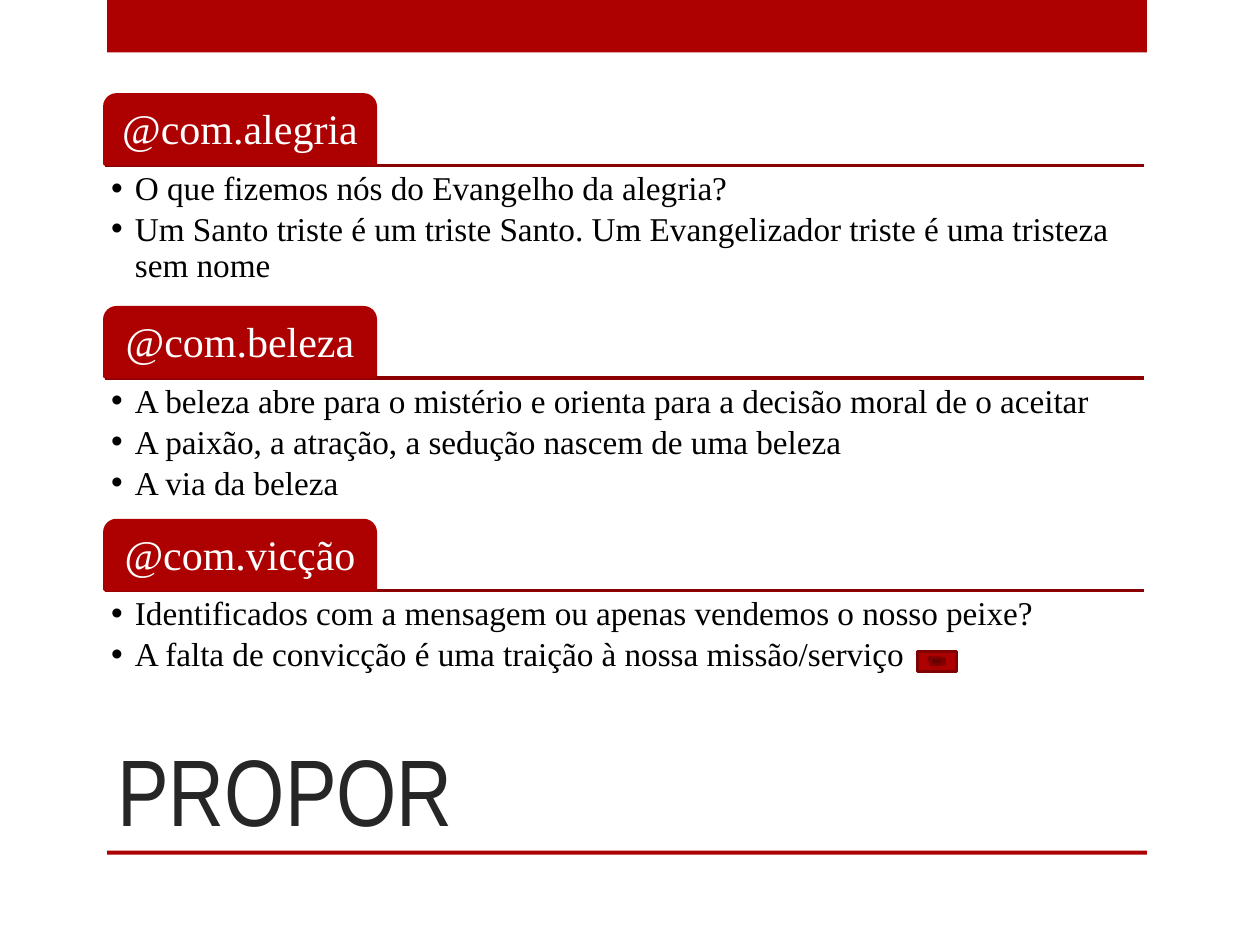
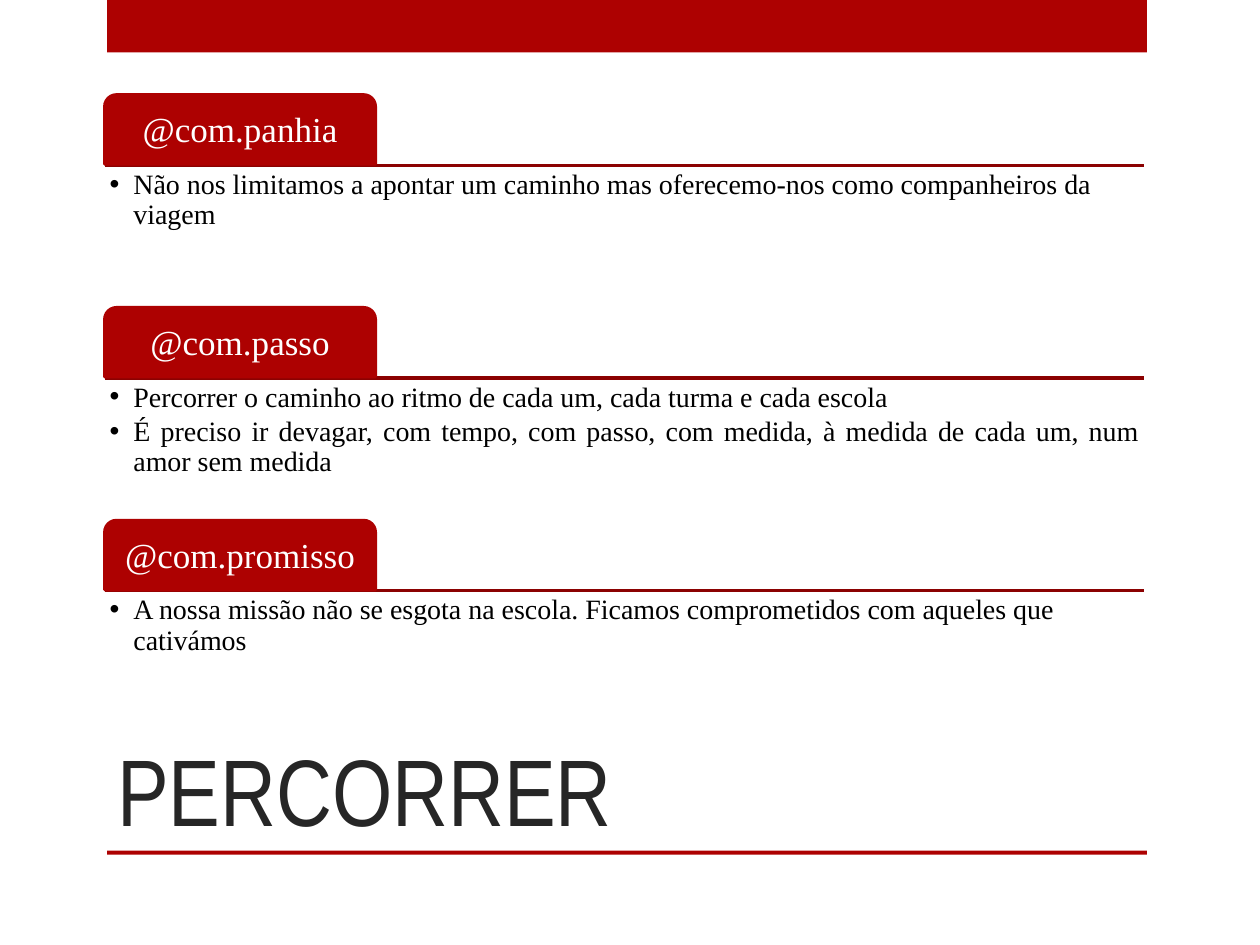
import pptx
import pptx.util
import pptx.dml.color
import pptx.enum.shapes
import pptx.enum.text
import pptx.oxml.ns
from lxml import etree

Cm = pptx.util.Cm
Pt = pptx.util.Pt
MSO_SHAPE = pptx.enum.shapes.MSO_SHAPE
PP_ALIGN = pptx.enum.text.PP_ALIGN
MSO_ANCHOR = pptx.enum.text.MSO_ANCHOR
qn = pptx.oxml.ns.qn

RED, RULE_RED, ICON_RED = "AD0101", "8B0101", "800101"
INK, BLACK, WHITE = "262626", "000000", "FFFFFF"
TITLE_FONT, TEXT_FONT = "Arial Narrow", "Times New Roman"
LINE_WIDTH = 1.75

CONTENT_LEFT, CONTENT_TOP, CONTENT_WIDTH = 2.11, 1.91, 20.96
SECTION_STEP = 4.29
TAB_WIDTH, TAB_HEIGHT = 5.46, 1.4
RULE_OFFSET, LIST_HEIGHT = 1.42, 2.82

SLIDES = [
    {
        "title": "PROPOR", "tab_size": 24, "list_size": 19, "inset": 0.13,
        "movie_button": True,
        "sections": [
            ("@com.alegria", PP_ALIGN.LEFT, [
                "O que fizemos nós do Evangelho da alegria?",
                "Um Santo triste é um triste Santo. Um Evangelizador triste é "
                "uma tristeza sem nome"]),
            ("@com.beleza", PP_ALIGN.LEFT, [
                "A beleza abre para o mistério e orienta para a decisão moral "
                "de o aceitar",
                "A paixão, a atração, a sedução nascem de uma beleza",
                "A via da beleza"]),
            ("@com.vicção", PP_ALIGN.LEFT, [
                "Identificados com a mensagem ou apenas vendemos o nosso peixe?",
                "A falta de convicção é uma traição à nossa missão/serviço"]),
        ],
    },
    {
        "title": "PERCORRER", "tab_size": 20, "list_size": 16, "inset": 0.1,
        "movie_button": False,
        "sections": [
            ("@com.panhia", PP_ALIGN.LEFT, [
                "Não nos limitamos a apontar um caminho mas oferecemo-nos como "
                "companheiros da viagem"]),
            ("@com.passo", PP_ALIGN.JUSTIFY, [
                "Percorrer o caminho ao ritmo de cada um, cada turma e cada escola",
                "É preciso ir devagar, com tempo, com passo, com medida, à "
                "medida de cada um, num amor sem medida"]),
            ("@com.promisso", PP_ALIGN.LEFT, [
                "A nossa missão não se esgota na escola. Ficamos comprometidos "
                "com aqueles que cativámos"]),
        ],
    },
]


def color(value):
    return pptx.dml.color.RGBColor.from_string(value)


def place(shape, left, top, width, height):
    shape.left, shape.top = Cm(left), Cm(top)
    shape.width, shape.height = Cm(width), Cm(height)


def add_filled(slide, kind, left, top, width, height, line=None):
    shape = slide.shapes.add_shape(kind, Cm(left), Cm(top), Cm(width), Cm(height))
    shape.shadow.inherit = False
    shape.fill.solid()
    shape.fill.fore_color.rgb = color(RED)
    if line:
        shape.line.color.rgb = color(line)
        shape.line.width = Pt(LINE_WIDTH)
    else:
        shape.line.fill.background()
    return shape


def format_frame(frame, inset, anchor):
    frame.margin_left = frame.margin_right = Cm(inset)
    frame.margin_top = frame.margin_bottom = Cm(inset)
    frame.vertical_anchor = anchor
    frame.word_wrap = True
    frame.auto_size = pptx.enum.text.MSO_AUTO_SIZE.NONE


def format_paragraph(paragraph, font, size, font_color, alignment):
    paragraph.alignment = alignment
    paragraph.font.name = font
    paragraph.font.size = Pt(size)
    paragraph.font.bold = False
    paragraph.font.color.rgb = color(font_color)


def add_bullet(paragraph, indent):
    properties = paragraph._p.get_or_add_pPr()
    properties.set("marL", str(Cm(indent)))
    properties.set("indent", str(-Cm(indent)))
    etree.SubElement(properties, qn("a:buFont")).set("typeface", "Arial")
    etree.SubElement(properties, qn("a:buChar")).set("char", "•")


def add_bands(slide, left, width):
    add_filled(slide, MSO_SHAPE.RECTANGLE, left, 0, width, 1.06)
    add_filled(slide, MSO_SHAPE.RECTANGLE, left, 17.15, width, 0.08)


def fill_title(title, text, left, top):
    place(title, left, top, 18.85, 4.44)
    frame = title.text_frame
    frame.text = text
    frame.vertical_anchor = MSO_ANCHOR.BOTTOM
    frame.auto_size = pptx.enum.text.MSO_AUTO_SIZE.NONE
    format_paragraph(frame.paragraphs[0], TITLE_FONT, 54, INK, PP_ALIGN.LEFT)


def add_rule(slide, left, top, width):
    rule = slide.shapes.add_connector(
        pptx.enum.shapes.MSO_CONNECTOR.STRAIGHT,
        Cm(left), Cm(top), Cm(left + width), Cm(top))
    rule.line.color.rgb = color(RULE_RED)
    rule.line.width = Pt(LINE_WIDTH)
    etree.SubElement(rule._element.spPr, qn("a:effectLst"))


def add_tab(slide, text, left, top, size, inset):
    tab = add_filled(slide, MSO_SHAPE.ROUND_2_SAME_RECTANGLE,
                     left, top, TAB_WIDTH, TAB_HEIGHT, RED)
    tab.adjustments[0], tab.adjustments[1] = 0.17, 0
    tab.text_frame.text = text
    format_frame(tab.text_frame, inset, MSO_ANCHOR.MIDDLE)
    paragraph = tab.text_frame.paragraphs[0]
    paragraph.line_spacing = 0.9
    format_paragraph(paragraph, TEXT_FONT, size, WHITE, PP_ALIGN.CENTER)


def fill_list(body, items, alignment, size, inset):
    frame = body.text_frame
    frame.text = "\n".join(items)
    format_frame(frame, inset, MSO_ANCHOR.TOP)
    for paragraph in frame.paragraphs:
        paragraph.line_spacing = 0.9
        paragraph.space_before = Pt(0)
        paragraph.space_after = Pt(0.15 * size)
        add_bullet(paragraph, 0.48)
        format_paragraph(paragraph, TEXT_FONT, size, BLACK, alignment)


def add_section(slide, body, section, content, left, top, width):
    """Place a tab, the rule under it and its bulleted list."""
    heading, alignment, items = section
    add_rule(slide, left, top + RULE_OFFSET, width)
    add_tab(slide, heading, left, top, content["tab_size"], content["inset"])
    place(body, left, top + RULE_OFFSET, width, LIST_HEIGHT)
    fill_list(body, items, alignment, content["list_size"], content["inset"])


def build_slide(presentation, content):
    layout = presentation.slide_layouts.get_by_name("Comparison")
    slide = presentation.slides.add_slide(layout)
    title, *bodies = slide.placeholders
    add_bands(slide, 2.16, CONTENT_WIDTH)
    fill_title(title, content["title"], CONTENT_LEFT, 12.73)

    sections = content["sections"]
    for index, (body, section) in enumerate(zip(bodies, sections)):
        add_section(slide, body, section, content, CONTENT_LEFT,
                    CONTENT_TOP + index * SECTION_STEP, CONTENT_WIDTH)
    for unused in bodies[len(sections):]:
        unused._element.getparent().remove(unused._element)

    if content["movie_button"]:
        add_filled(slide, MSO_SHAPE.ACTION_BUTTON_MOVIE,
                   18.49, 13.13, 0.79, 0.41, ICON_RED)


def main():
    presentation = pptx.Presentation()
    presentation.slide_width, presentation.slide_height = Cm(25.4), Cm(19.05)
    for content in SLIDES:
        build_slide(presentation, content)
    presentation.save("out.pptx")


if __name__ == "__main__":
    main()
